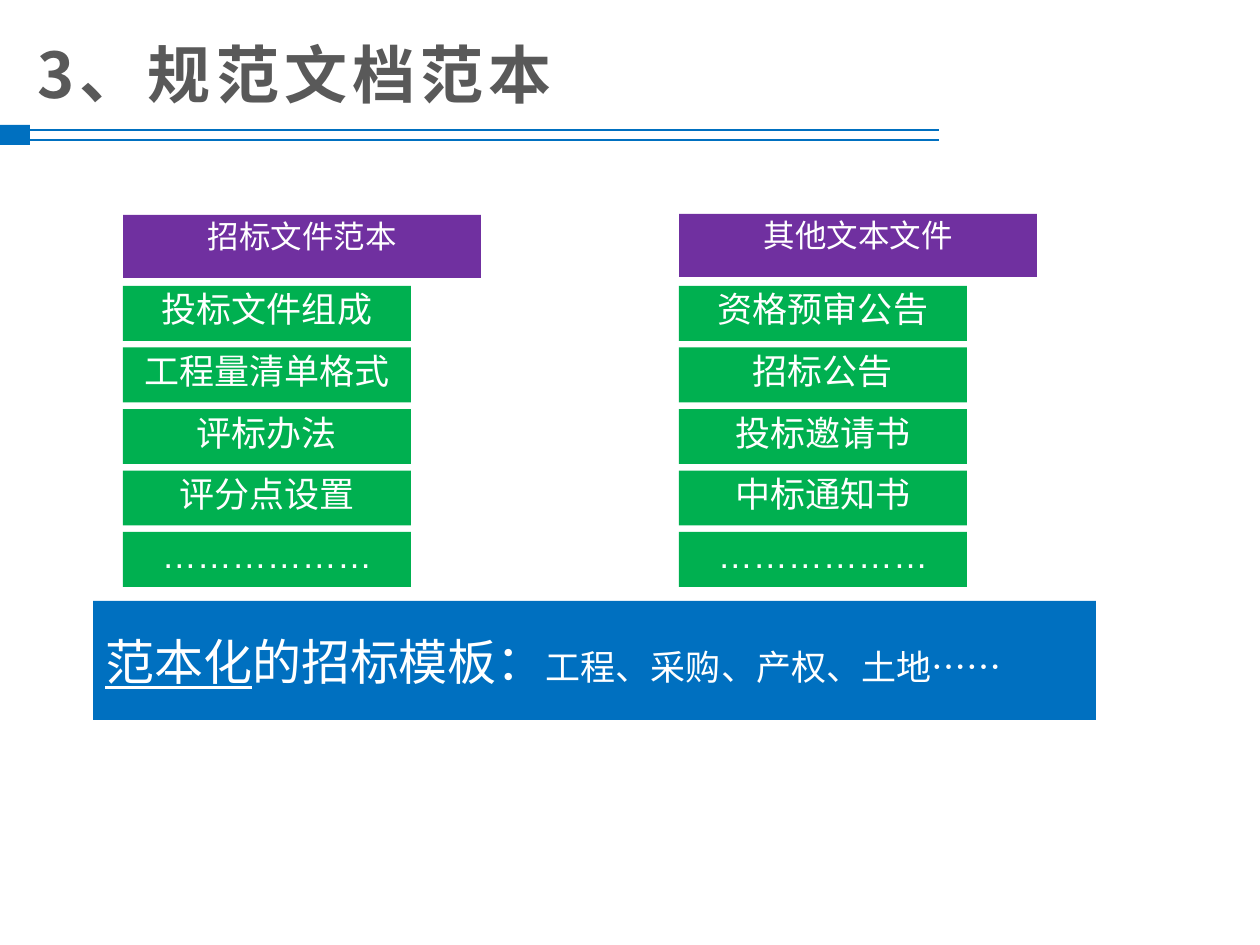
from dataclasses import dataclass

from lxml import etree
from pptx import Presentation
from pptx.dml.color import RGBColor
from pptx.enum.shapes import MSO_CONNECTOR, MSO_SHAPE
from pptx.enum.text import MSO_ANCHOR, PP_ALIGN
from pptx.oxml.ns import qn
from pptx.util import Emu, Pt

RECT, STRAIGHT = MSO_SHAPE.RECTANGLE, MSO_CONNECTOR.STRAIGHT
TOP, MIDDLE = MSO_ANCHOR.TOP, MSO_ANCHOR.MIDDLE
LEFT, CENTER = PP_ALIGN.LEFT, PP_ALIGN.CENTER


@dataclass(frozen=True)
class Theme:
    """Colours, fonts and type sizes of the slide."""
    blue: str = "0070C0"
    purple: str = "7030A0"
    green: str = "00B050"
    white: str = "FFFFFF"
    gray: str = "595959"
    latin: str = "Arial"
    cjk: str = "Noto Sans CJK SC"
    title: int = 36
    banner: int = 28
    item: int = 20
    head: int = 18


T = Theme()


def px(n):
    """Turn pixels at 126 to the inch into EMU."""
    return Emu(round(n * 914400 / 126))


def add_run(p, text, size, color, latin=T.latin):
    """Add a run with Latin and East Asian fonts."""
    r = p.add_run()
    r.text = text
    r.font.size = Pt(size)
    r.font.name = latin
    r.font.color.rgb = RGBColor.from_string(color)
    rPr = r._r.get_or_add_rPr()
    rPr.set("lang", "zh-CN")
    etree.SubElement(rPr, qn("a:ea")).set("typeface", T.cjk)
    return r


def add_rect(s, x, y, w, h, fill):
    """Add a plain filled rectangle."""
    sp = s.shapes.add_shape(RECT, px(x), px(y), px(w), px(h))
    sp.shadow.inherit = False
    sp.fill.solid()
    sp.fill.fore_color.rgb = RGBColor.from_string(fill)
    sp.line.fill.background()
    return sp


def add_label(s, x, y, w, h, fill, text, size):
    """Add a filled box with a centred label at its top."""
    tf = add_rect(s, x, y, w, h, fill).text_frame
    tf.word_wrap = True
    tf.vertical_anchor = TOP
    tf.margin_top = tf.margin_bottom = px(2)
    p = tf.paragraphs[0]
    p.alignment = CENTER
    add_run(p, text, size, T.white)


def add_rule(s, x, y, w):
    """Add a thin horizontal line."""
    c = s.shapes.add_connector(STRAIGHT, px(x), px(y), px(x + w), px(y))
    c.line.color.rgb = RGBColor.from_string(T.blue)
    c.line.width = Pt(0.9)
    etree.SubElement(c._element.spPr, qn("a:effectLst"))


def add_header(s, x, y, w, text):
    """Place the title above a double rule with a square marker."""
    for offset in (130, 140):
        add_rule(s, x + 25, y + offset, w - 25)
    for offset in (125, 135):
        add_rect(s, x, y + offset, 30, 10, T.blue)
    tf = s.shapes.add_textbox(px(x + 25), px(y + 28), px(w - 18), px(90)).text_frame
    tf.word_wrap = True
    tf.vertical_anchor = MIDDLE
    r = add_run(tf.paragraphs[0], text, T.title, T.gray, T.cjk)
    r.font.bold = True
    r._r.get_or_add_rPr().set("spc", "300")


def add_column(s, x, y, w, head, items):
    """Place a heading box over an evenly spaced stack of items."""
    add_label(s, x, y, w, 63, T.purple, head, T.head)
    for i, item in enumerate(items):
        add_label(s, x, 286 + 61.5 * i, 288, 55, T.green, item, T.item)


def add_banner(s, x, y, w, h, parts):
    """Place a wide banner whose parts are text, size and underline."""
    tf = add_rect(s, x, y, w, h, T.blue).text_frame
    tf.word_wrap = True
    tf.vertical_anchor = MIDDLE
    p = tf.paragraphs[0]
    p.alignment = LEFT
    for text, size, underline in parts:
        add_run(p, text, size, T.white).font.underline = underline


def main():
    """Build the slide and save it."""
    prs = Presentation()
    prs.slide_width, prs.slide_height = px(1260), px(945)
    s = prs.slides.add_slide(prs.slide_layouts[6])
    add_header(s, 0, 0, 939, "3、规范文档范本")
    add_column(s, 123, 215, 358, "招标文件范本",
               ["投标文件组成", "工程量清单格式", "评标办法", "评分点设置", "………………"])
    add_column(s, 679, 214, 358, "其他文本文件",
               ["资格预审公告", "招标公告", "投标邀请书", "中标通知书", "………………"])
    add_banner(s, 93, 601, 1003, 119, [
        ("范本化", T.banner, True),
        ("的招标模板：", T.banner, False),
        ("工程、采购、产权、土地……", T.item, False),
    ])
    prs.save("out.pptx")


if __name__ == "__main__":
    main()
